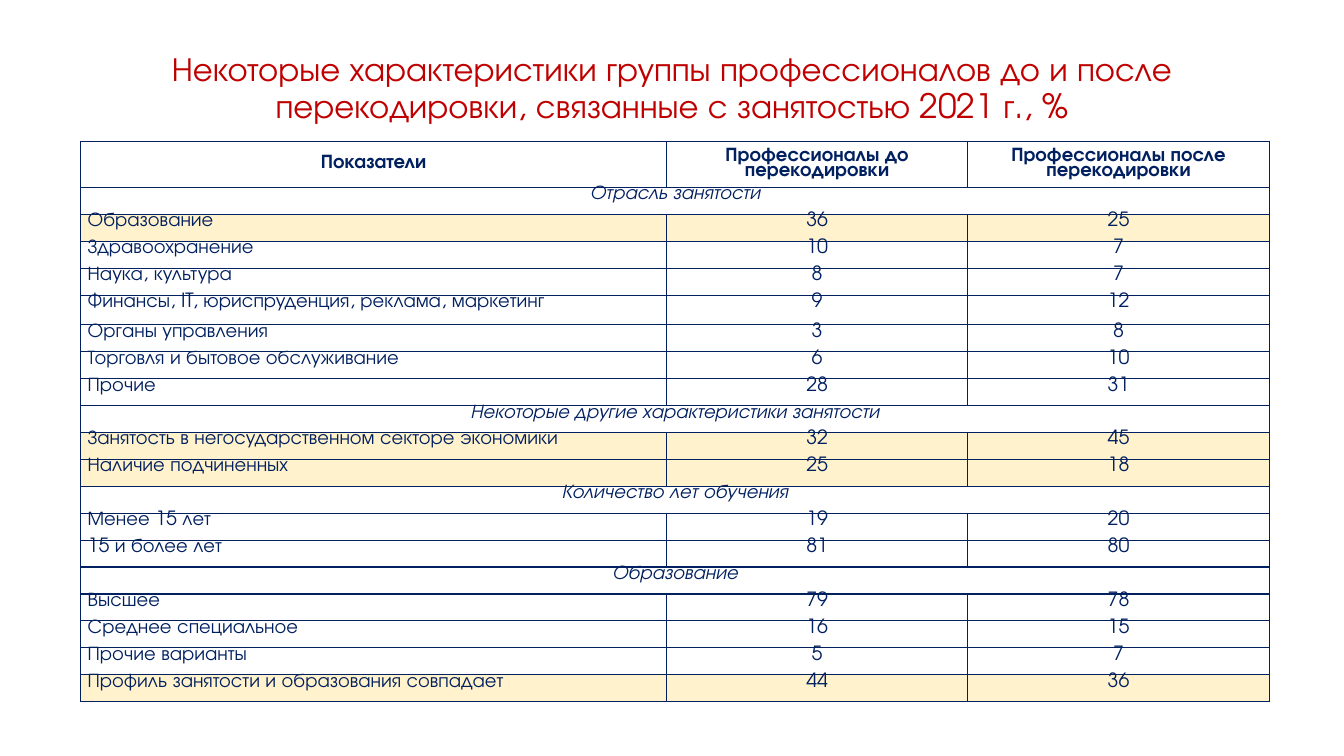
from dataclasses import dataclass

from lxml import etree
from pptx import Presentation
from pptx import util as u
from pptx.dml.color import RGBColor
from pptx.enum import text
from pptx.oxml import ns

WIDTH, HEIGHT = u.Inches(13.33), u.Inches(7.5)
FONT = "TeX Gyre Adventor"
NAVY, RED, CREAM = "002060", "C00000", "FFF2CC"
COLUMNS = (5.81, 2.99, 2.99)
HEADER_ROW, BODY_ROW, FINANCE_ROW = 0.46, 0.267, 0.296
CENTER, JUSTIFY = text.PP_ALIGN.CENTER, text.PP_ALIGN.JUSTIFY
TOP, MIDDLE = text.MSO_ANCHOR.TOP, text.MSO_ANCHOR.MIDDLE
CELL_MARGINS = {
    "margin_left": u.Inches(0.07),
    "margin_right": u.Inches(0.07),
    "margin_top": 0,
    "margin_bottom": 0,
}


@dataclass(frozen=True)
class Row:
    """A table row; a row without values is a section heading."""
    label: str
    values: tuple[str, ...] = ()
    highlighted: bool = False
    header: bool = False
    height: float = BODY_ROW

    @property
    def section(self) -> bool:
        return not self.values


TITLE = ("Некоторые характеристики группы профессионалов до и после "
         "перекодировки, связанные с занятостью 2021 г., %")
ROWS = (
    Row("Показатели",
        ("Профессионалы до перекодировки", "Профессионалы после перекодировки"),
        header=True, height=HEADER_ROW),
    Row("Отрасль занятости"),
    Row("Образование", ("36", "25"), highlighted=True),
    Row("Здравоохранение", ("10", "7")),
    Row("Наука, культура", ("8", "7")),
    Row("Финансы, IT, юриспруденция, реклама, маркетинг", ("9", "12"),
        height=FINANCE_ROW),
    Row("Органы управления", ("3", "8")),
    Row("Торговля и бытовое обслуживание", ("6", "10")),
    Row("Прочие", ("28", "31")),
    Row("Некоторые другие характеристики занятости"),
    Row("Занятость в негосударственном секторе экономики", ("32", "45"),
        highlighted=True),
    Row("Наличие подчиненных", ("25", "18"), highlighted=True),
    Row("Количество лет обучения"),
    Row("Менее 15 лет", ("19", "20")),
    Row("15 и более лет", ("81", "80")),
    Row("Образование"),
    Row("Высшее", ("79", "78")),
    Row("Среднее специальное", ("16", "15")),
    Row("Прочие варианты", ("5", "7")),
    Row("Профиль занятости и образования совпадает", ("44", "36"),
        highlighted=True),
)


def color(hex_code: str) -> RGBColor:
    return RGBColor.from_string(hex_code)


def apply(target, formats: dict) -> None:
    for name, value in formats.items():
        setattr(target, name, value)


def write(paragraph, wording: str, hex_code: str, layout: dict, font: dict) -> None:
    apply(paragraph, layout)
    run = paragraph.add_run()
    run.text = wording
    apply(run.font, {"name": FONT, **font})
    run.font.color.rgb = color(hex_code)


def add_borders(cell) -> None:
    properties = cell._tc.get_or_add_tcPr()
    for position, side in enumerate(("lnL", "lnR", "lnT", "lnB")):
        line = etree.Element(ns.qn(f"a:{side}"), w=str(u.Pt(1)))
        fill = etree.SubElement(line, ns.qn("a:solidFill"))
        etree.SubElement(fill, ns.qn("a:srgbClr"), val=NAVY)
        properties.insert(position, line)


def format_cell(cell, row: Row) -> None:
    apply(cell, {**CELL_MARGINS, "vertical_anchor": MIDDLE if row.header else TOP})
    if row.highlighted:
        cell.fill.solid()
        cell.fill.fore_color.rgb = color(CREAM)
    else:
        cell.fill.background()
    add_borders(cell)


def add_title(slide) -> None:
    box = slide.shapes.add_textbox(
        u.Inches(0.62), u.Inches(0.37), u.Inches(12.09), u.Inches(1.03))
    apply(box.text_frame, {"word_wrap": True, "vertical_anchor": MIDDLE,
                           "auto_size": text.MSO_AUTO_SIZE.NONE})
    write(box.text_frame.paragraphs[0], TITLE, RED,
          {"alignment": CENTER, "line_spacing": 0.9}, {"size": u.Pt(24)})


def add_indicators(slide) -> None:
    height = sum(row.height for row in ROWS)
    table = slide.shapes.add_table(
        len(ROWS), len(COLUMNS), u.Inches(0.8), u.Inches(1.4),
        u.Inches(sum(COLUMNS)), u.Inches(height)).table
    apply(table, {"first_row": False, "horz_banding": False})
    for column, width in zip(table.columns, COLUMNS):
        column.width = u.Inches(width)
    for index, row in enumerate(ROWS):
        table.rows[index].height = u.Inches(row.height)
        cells = [table.cell(index, column) for column in range(len(COLUMNS))]
        for cell in cells:
            format_cell(cell, row)
        if row.section:
            cells[0].merge(cells[-1])
        for column, wording in enumerate((row.label, *row.values)):
            centered = column > 0 or row.section or row.header
            write(cells[column].text_frame.paragraphs[0], wording, NAVY,
                  {"alignment": CENTER if centered else JUSTIFY,
                   "line_spacing": 0.86, "space_after": u.Pt(8)},
                  {"size": u.Pt(14), "bold": row.header, "italic": row.section})


def main() -> None:
    deck = Presentation()
    apply(deck, {"slide_width": WIDTH, "slide_height": HEIGHT})
    slide = deck.slides.add_slide(deck.slide_layouts[6])
    add_title(slide)
    add_indicators(slide)
    deck.save("out.pptx")


if __name__ == "__main__":
    main()
